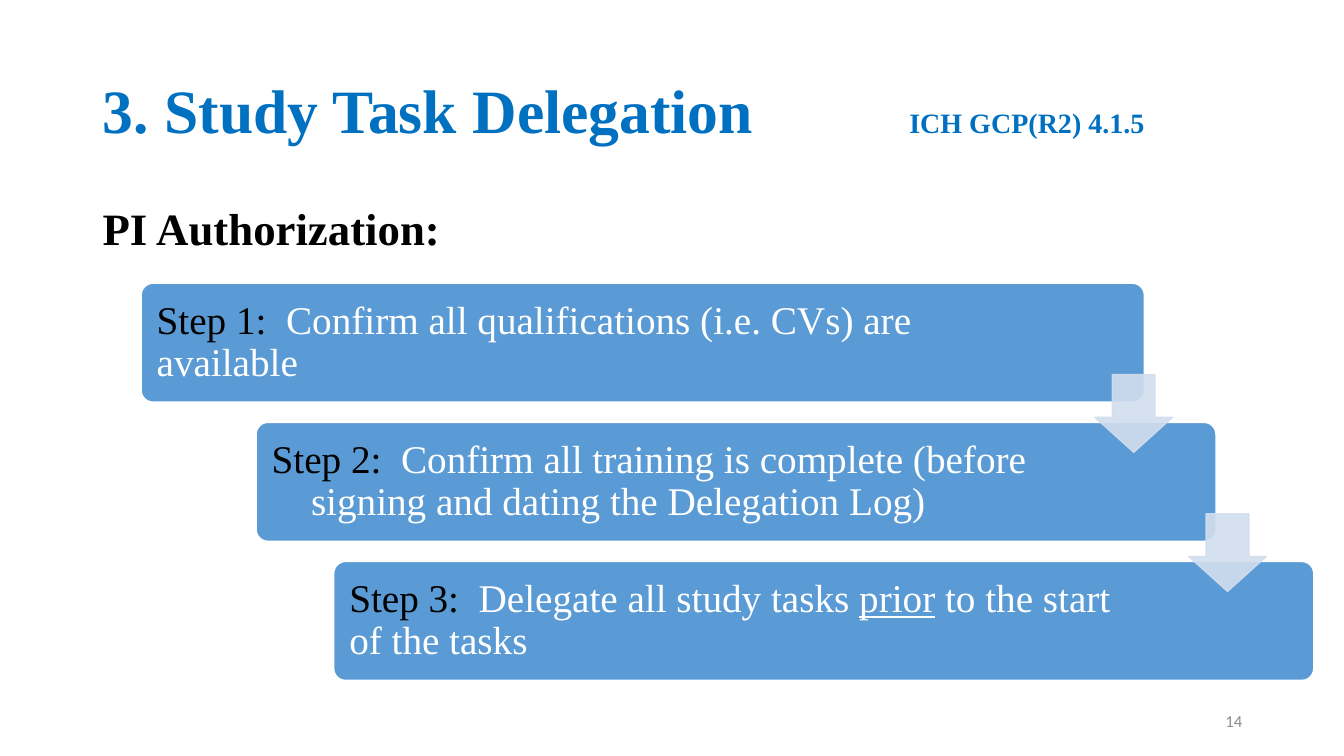
"""Build the study task delegation slide with its three descending steps."""
from lxml import etree
from pptx import Presentation
from pptx.dml.color import RGBColor
from pptx.enum.shapes import MSO_SHAPE
from pptx.enum.text import MSO_ANCHOR, PP_ALIGN
from pptx.oxml.ns import qn
from pptx.util import Inches, Pt

ROUNDED, DOWN_ARROW = MSO_SHAPE.ROUNDED_RECTANGLE, MSO_SHAPE.DOWN_ARROW
TOP, MIDDLE = MSO_ANCHOR.TOP, MSO_ANCHOR.MIDDLE
LEFT, RIGHT = PP_ALIGN.LEFT, PP_ALIGN.RIGHT
SERIF, SANS = "Times New Roman", "Calibri"
COLORS = {"title": "0070C0", "ink": "000000", "step": "5B9BD5", "paper": "FFFFFF",
          "arrow": "D2DEEF", "number": "8C8C8C"}

MARGIN, CONTENT_WIDTH = 0.92, 11.5
STEP_TOP, STEP_HEIGHT, STEP_PITCH = 2.81, 1.18, 1.38
ARROW_SIZE, ARROW_RISE = 0.77, 0.28

prs = Presentation()
prs.slide_width, prs.slide_height = Inches(13.33), Inches(7.5)
slide = prs.slides.add_slide(prs.slide_layouts[6])


def write(shape, runs, size, anchor=MIDDLE, align=LEFT, font=SERIF, bold=False, spacing=0.9):
    """Fill a shape with one paragraph of (text, color) runs."""
    frame = shape.text_frame
    frame.word_wrap = True
    frame.vertical_anchor = anchor
    paragraph = frame.paragraphs[0]
    paragraph.alignment, paragraph.line_spacing = align, spacing
    paragraph.font.name, paragraph.font.size, paragraph.font.bold = font, Pt(size), bold
    for text, color in runs:
        run = paragraph.add_run()
        run.text = text
        run.font.color.rgb = RGBColor.from_string(COLORS[color])
    return paragraph


def add_block(preset, box, adjustments, fill, line):
    """Add a preset shape with a flat fill and a thin outline."""
    block = slide.shapes.add_shape(preset, *map(Inches, box))
    block.shadow.inherit = False
    for index, value in enumerate(adjustments):
        block.adjustments[index] = value
    block.fill.solid()
    block.fill.fore_color.rgb = RGBColor.from_string(COLORS[fill])
    block.line.color.rgb = RGBColor.from_string(COLORS[line])
    block.line.width = Pt(1)
    return block


title = slide.shapes.add_textbox(*map(Inches, (MARGIN, 0.4, CONTENT_WIDTH, 1.45)))
heading = write(title, [("3. Study Task Delegation\t", "title"),
                        ("ICH GCP(R2) 4.1.5", "title")], 44, bold=True)
heading.runs[1].font.size = Pt(20)
tab_stops = etree.SubElement(heading._p.get_or_add_pPr(), qn("a:tabLst"))
etree.SubElement(tab_stops, qn("a:tab"), pos=str(Inches(8)), algn="l")

subtitle = slide.shapes.add_textbox(*map(Inches, (MARGIN, 2, CONTENT_WIDTH, 0.7)))
write(subtitle, [("PI Authorization:", "ink")], 32, TOP, bold=True).space_before = Pt(10)

page_number = slide.shapes.add_textbox(*map(Inches, (9.42, 6.95, 3, 0.4)))
write(page_number, [("14", "number")], 12, align=RIGHT, font=SANS, spacing=1)

steps = [
    (1.4, 9.95, 1.27, 0, ["  Confirm all qualifications (i.e. CVs) are available"]),
    (2.54, 9.52, 1.67, 0.39, ["  Confirm all training is complete (before "
                              "signing and dating the Delegation Log)"]),
    (3.31, 9.72, 1.7, 0, ["  Delegate all study tasks ", "prior", " to the start of the tasks"]),
]
for row, (left, width, right_inset, hanging, parts) in enumerate(steps):
    box = (left, STEP_TOP + row * STEP_PITCH, width, STEP_HEIGHT)
    step = add_block(ROUNDED, box, [0.1], "step", "paper")
    frame = step.text_frame
    frame.margin_left = frame.margin_top = frame.margin_bottom = Inches(0.12)
    frame.margin_right = Inches(right_inset)
    runs = [(f"Step {row + 1}:", "ink")] + [(part, "paper") for part in parts]
    paragraph = write(step, runs, 28)
    if hanging:
        properties = paragraph._p.get_or_add_pPr()
        properties.set("marL", str(Inches(hanging)))
        properties.set("indent", str(-Inches(hanging)))
    for run in paragraph.runs:
        if run.text == "prior":
            run.font.underline = True

for row, left in enumerate((10.86, 11.79), start=1):
    top = STEP_TOP + row * STEP_PITCH - ARROW_RISE - ARROW_SIZE / 4
    arrow = add_block(DOWN_ARROW, (left, top, ARROW_SIZE, ARROW_SIZE), [0.55, 0.45],
                      "arrow", "arrow")
    for color in arrow._element.spPr.iter(qn("a:srgbClr")):
        etree.SubElement(color, qn("a:alpha"), val="90000")

prs.save("out.pptx")
